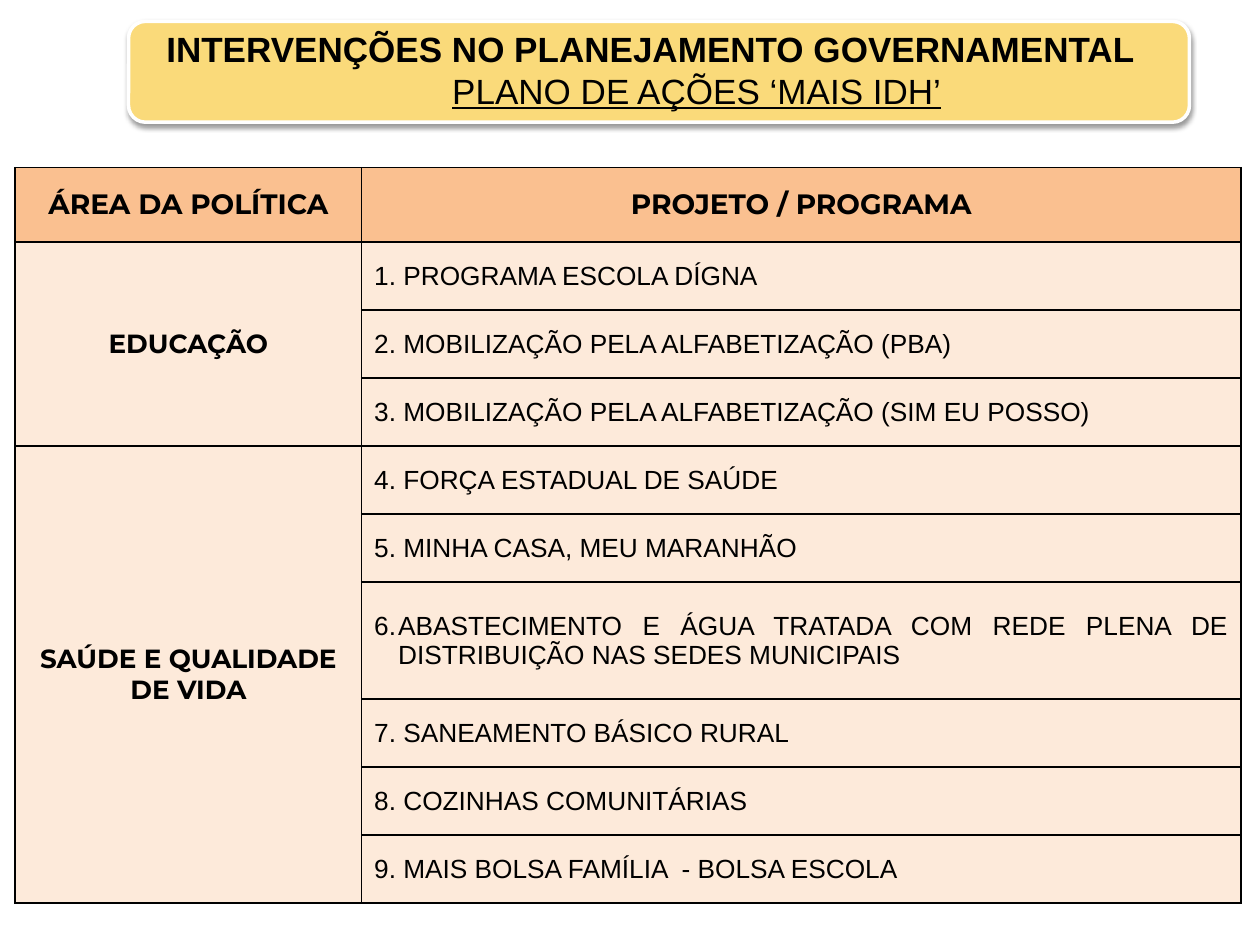
from dataclasses import dataclass

from lxml.etree import SubElement
from pptx import Presentation
from pptx.dml.color import RGBColor as Color
from pptx.enum.shapes import MSO_SHAPE as Preset
from pptx.enum.text import MSO_ANCHOR as Anchor, MSO_AUTO_SIZE as AutoSize, PP_ALIGN as Align
from pptx.oxml.ns import qn
from pptx.util import Inches, Pt


@dataclass(frozen=True)
class Theme:
    banner: str = "FADA7A"
    header: str = "FAC090"
    body: str = "FDEADA"
    ink: str = "000000"
    paper: str = "FFFFFF"
    plain: str = "Arial"
    display: str = "Montserrat"
    title_size: int = 20
    header_size: int = 16
    body_size: int = 15


THEME = Theme()
TITLE = "INTERVENÇÕES NO PLANEJAMENTO GOVERNAMENTAL"
SUBTITLE = "PLANO DE AÇÕES ‘MAIS IDH’"
HEADERS = ["ÁREA DA POLÍTICA", "PROJETO / PROGRAMA"]
LONG_ITEM = "6.\tABASTECIMENTO E ÁGUA TRATADA COM REDE PLENA DE DISTRIBUIÇÃO NAS SEDES MUNICIPAIS"
AREAS = {
    "EDUCAÇÃO": [
        "1. PROGRAMA ESCOLA DÍGNA",
        "2. MOBILIZAÇÃO PELA ALFABETIZAÇÃO (PBA)",
        "3. MOBILIZAÇÃO PELA ALFABETIZAÇÃO (SIM EU POSSO)",
    ],
    "SAÚDE E QUALIDADE DE VIDA": [
        "4. FORÇA ESTADUAL DE SAÚDE",
        "5. MINHA CASA, MEU MARANHÃO",
        LONG_ITEM,
        "7. SANEAMENTO BÁSICO RURAL",
        "8. COZINHAS COMUNITÁRIAS",
        "9. MAIS BOLSA FAMÍLIA  - BOLSA ESCOLA",
    ],
}
COLUMNS = [2.75, 6.98]
HEADER_ROW, ITEM_ROW, LONG_ROW = 0.59, 0.54, 0.93


def add_span(para, text, font, size, bold=False, underline=False):
    span = para.add_run()
    span.text = text
    span.font.name = font
    span.font.size = Pt(size)
    span.font.bold = bold
    span.font.underline = underline
    span.font.color.rgb = Color.from_string(THEME.ink)


def paint(target, color):
    target.fill.solid()
    target.fill.fore_color.rgb = Color.from_string(color)


def add_shadow(shape):
    shape.shadow.inherit = False
    effects = shape.element.spPr.find(qn("a:effectLst"))
    shadow = SubElement(effects, qn("a:outerShdw"), blurRad=str(Pt(3)), dist=str(Pt(2)),
                        dir=str(90 * 60000), rotWithShape="0")
    tint = SubElement(shadow, qn("a:srgbClr"), val=THEME.ink)
    SubElement(tint, qn("a:alpha"), val="40000")


def add_banner(page, left, top, width, height):
    banner = page.shapes.add_shape(Preset.ROUNDED_RECTANGLE, Inches(left), Inches(top),
                                   Inches(width), Inches(height))
    paint(banner, THEME.banner)
    banner.line.color.rgb = Color.from_string(THEME.paper)
    banner.line.width = Pt(2)
    add_shadow(banner)

    title = page.shapes.title
    banner.element.addnext(title.element)  # the title lies over the banner
    title.left, title.top = Inches(left + 0.2), Inches(top - 0.33)
    title.width, title.height = Inches(width + 0.2), Inches(height + 0.62)
    frame = title.text_frame
    frame.word_wrap = True
    frame.auto_size = AutoSize.NONE
    frame.vertical_anchor = Anchor.MIDDLE
    heading = frame.paragraphs[0]
    heading.alignment = Align.LEFT
    add_span(heading, TITLE, THEME.plain, THEME.title_size, bold=True)
    subheading = frame.add_paragraph()
    subheading.alignment = Align.CENTER
    add_span(subheading, SUBTITLE, THEME.plain, THEME.title_size, underline=True)


def style_cell(cell, color):
    """Give the cell four thin borders, a fill and middle anchoring."""
    properties = cell._tc.get_or_add_tcPr()
    for side in ("lnL", "lnR", "lnT", "lnB"):
        border = SubElement(properties, qn(f"a:{side}"), w=str(Pt(1)))
        SubElement(SubElement(border, qn("a:solidFill")), qn("a:srgbClr"), val=THEME.ink)
    paint(cell, color)
    cell.vertical_anchor = Anchor.MIDDLE


def write_label(cell, text, size):
    para = cell.text_frame.paragraphs[0]
    para.alignment = Align.CENTER
    add_span(para, text, THEME.display, size, bold=True)


def write_item(cell, text):
    para = cell.text_frame.paragraphs[0]
    para.alignment = Align.JUSTIFY
    if text == LONG_ITEM:
        hanging = Inches(0.19)
        properties = para._p.get_or_add_pPr()
        properties.set("marL", str(hanging))
        properties.set("indent", str(-hanging))
    add_span(para, text, THEME.plain, THEME.body_size)


def add_programs(page, left, top):
    items = [item for group in AREAS.values() for item in group]
    heights = [HEADER_ROW] + [LONG_ROW if item == LONG_ITEM else ITEM_ROW for item in items]
    table = page.shapes.add_table(len(heights), len(COLUMNS), Inches(left), Inches(top),
                                  Inches(sum(COLUMNS)), Inches(sum(heights))).table
    for column, width in zip(table.columns, COLUMNS):
        column.width = Inches(width)
    for index, (row, height) in enumerate(zip(table.rows, heights)):
        row.height = Inches(height)
        for cell in row.cells:
            style_cell(cell, THEME.body if index else THEME.header)

    for cell, text in zip(table.rows[0].cells, HEADERS):
        write_label(cell, text, THEME.header_size)
    first = 1
    for area, group in AREAS.items():
        last = first + len(group) - 1
        table.cell(first, 0).merge(table.cell(last, 0))
        write_label(table.cell(first, 0), area, THEME.body_size)
        for offset, item in enumerate(group):
            write_item(table.cell(first + offset, 1), item)
        first = last + 1


def main():
    deck = Presentation()
    deck.slide_width, deck.slide_height = Inches(10), Inches(7.5)
    page = deck.slides.add_slide(deck.slide_layouts.get_by_name("Title Only"))
    add_banner(page, 1.02, 0.17, 8.42, 0.8)
    add_programs(page, 0.12, 1.33)
    deck.save("out.pptx")


if __name__ == "__main__":
    main()
